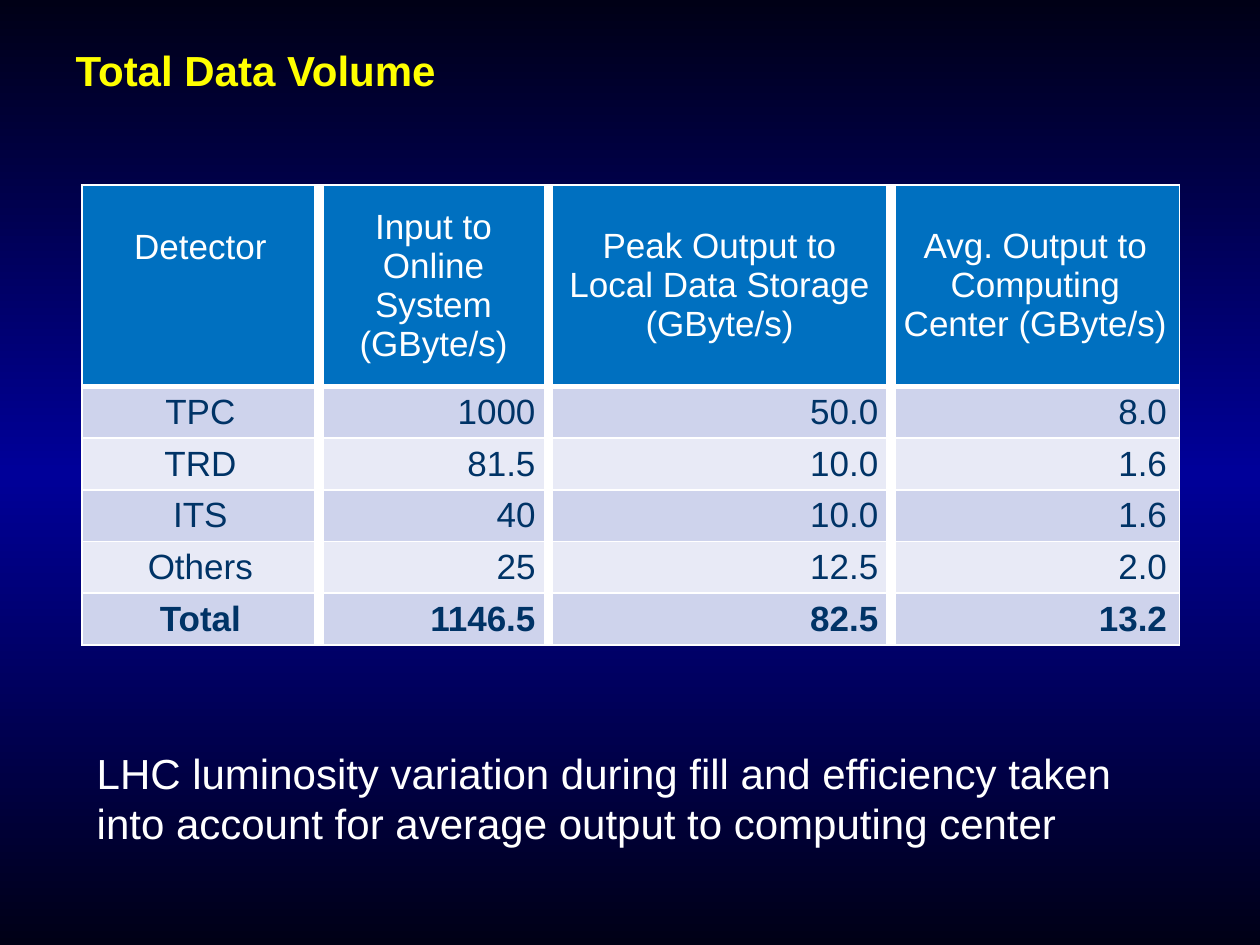
"""Build the slide on total detector data volume."""
from copy import deepcopy
from dataclasses import dataclass

from lxml import etree
from pptx import Presentation
from pptx import util as u
from pptx.dml.color import RGBColor
from pptx.enum import text
from pptx.oxml import ns

CENTER, RIGHT = text.PP_ALIGN.CENTER, text.PP_ALIGN.RIGHT
HEADER_FILL, BANDS = "0070C0", ("E8EAF6", "CED3EC")
WHITE, NAVY, YELLOW = "FFFFFF", "003366", "FFFF00"
THIN, MEDIUM, THICK = 1, 3, 6
HEADER_HEIGHT, ROW_HEIGHT = 4.06, 1.04


@dataclass
class Column:
    heading: str
    width: float
    values: list[str]
    align: text.PP_ALIGN = RIGHT


COLUMNS = [
    Column("Detector", 4.78, ["TPC", "TRD", "ITS", "Others", "Total"], CENTER),
    Column("Input to Online System (GByte/s)", 4.62,
           ["1000", "81.5", "40", "25", "1146.5"]),
    Column("Peak Output to Local Data Storage (GByte/s)", 6.91,
           ["50.0", "10.0", "10.0", "12.5", "82.5"]),
    Column("Avg. Output to Computing\vCenter (GByte/s)", 5.82,
           ["8.0", "1.6", "1.6", "2.0", "13.2"]),
]


def rgb(value: str) -> RGBColor:
    return RGBColor.from_string(value)


def format_text(tf, size: int, color: str, bold: bool = False, align=None) -> None:
    for p in tf.paragraphs:
        p.alignment = align
        for r in p.runs:
            r.font.name, r.font.size = "Arial", u.Pt(size)
            r.font.bold, r.font.color.rgb = bold, rgb(color)


def set_background(s, colors: list[str]) -> None:
    fill = s.background.fill
    fill.gradient()
    fill.gradient_angle = 270
    stops = s.element.find(".//" + ns.qn("a:gsLst"))
    while len(stops) < len(colors):
        stops.append(deepcopy(stops[-1]))
    for i, (stop, color) in enumerate(zip(fill.gradient_stops, colors)):
        stop.position = i / (len(colors) - 1)
        stop.color.rgb = rgb(color)


def set_borders(cell, widths: dict[str, int]) -> None:
    tc_pr = cell._tc.get_or_add_tcPr()
    for i, (side, width) in enumerate(widths.items()):
        ln = etree.Element(ns.qn(f"a:ln{side}"), w=str(u.Pt(width)))
        fill = etree.SubElement(ln, ns.qn("a:solidFill"))
        etree.SubElement(fill, ns.qn("a:srgbClr"), val=WHITE)
        tc_pr.insert(i, ln)


def format_cell(cell, row: int, col: int, align: text.PP_ALIGN, last_row: int) -> None:
    header = row == 0
    cell.fill.solid()
    cell.fill.fore_color.rgb = rgb(HEADER_FILL if header else BANDS[row % 2])
    if header:
        cell.vertical_anchor = text.MSO_ANCHOR.MIDDLE
    format_text(cell.text_frame, 20, WHITE if header else NAVY,
                row == last_row, CENTER if header else align)
    set_borders(cell, {
        "L": THICK if col else THIN,
        "R": THICK if col < len(COLUMNS) - 1 else THIN,
        "T": MEDIUM if row == 1 else THIN,
        "B": MEDIUM if header else THIN,
    })


def add_volume_table(s, left: float, top: float) -> None:
    last_row = len(COLUMNS[0].values)
    width = sum(c.width for c in COLUMNS)
    height = HEADER_HEIGHT + last_row * ROW_HEIGHT
    table = s.shapes.add_table(last_row + 1, len(COLUMNS), u.Cm(left), u.Cm(top),
                               u.Cm(width), u.Cm(height)).table
    for i, row in enumerate(table.rows):
        row.height = u.Cm(ROW_HEIGHT if i else HEADER_HEIGHT)
    for col, column in enumerate(COLUMNS):
        table.columns[col].width = u.Cm(column.width)
        for row, value in enumerate([column.heading, *column.values]):
            cell = table.cell(row, col)
            cell.text_frame.text = value
            format_cell(cell, row, col, column.align, last_row)
    table.cell(0, 0).margin_bottom = u.Cm(1.68)


def add_title(s, title: str) -> None:
    sp = s.shapes.title
    sp.left, sp.top, sp.width, sp.height = u.Cm(1.27), u.Cm(0.76), u.Cm(22.86), u.Cm(3.18)
    tf = sp.text_frame
    tf.text, tf.vertical_anchor = title, text.MSO_ANCHOR.TOP
    format_text(tf, 24, YELLOW, True, text.PP_ALIGN.LEFT)


def add_note(s, note: str) -> None:
    sp = s.shapes.add_textbox(u.Cm(1.7), u.Cm(14.94), u.Cm(22), u.Cm(2.31))
    tf = sp.text_frame
    tf.text, tf.word_wrap = note, True
    format_text(tf, 24, WHITE)


def main() -> None:
    prs = Presentation()
    prs.slide_width, prs.slide_height = u.Cm(25.4), u.Cm(19.05)
    s = prs.slides.add_slide(prs.slide_layouts[5])
    set_background(s, ["000016", "000099", "000016"])
    add_title(s, "Total Data Volume")
    add_volume_table(s, 1.65, 3.73)
    add_note(s, "LHC luminosity variation during fill and efficiency taken "
                "into account for average output to computing center")
    prs.save("out.pptx")


if __name__ == "__main__":
    main()
